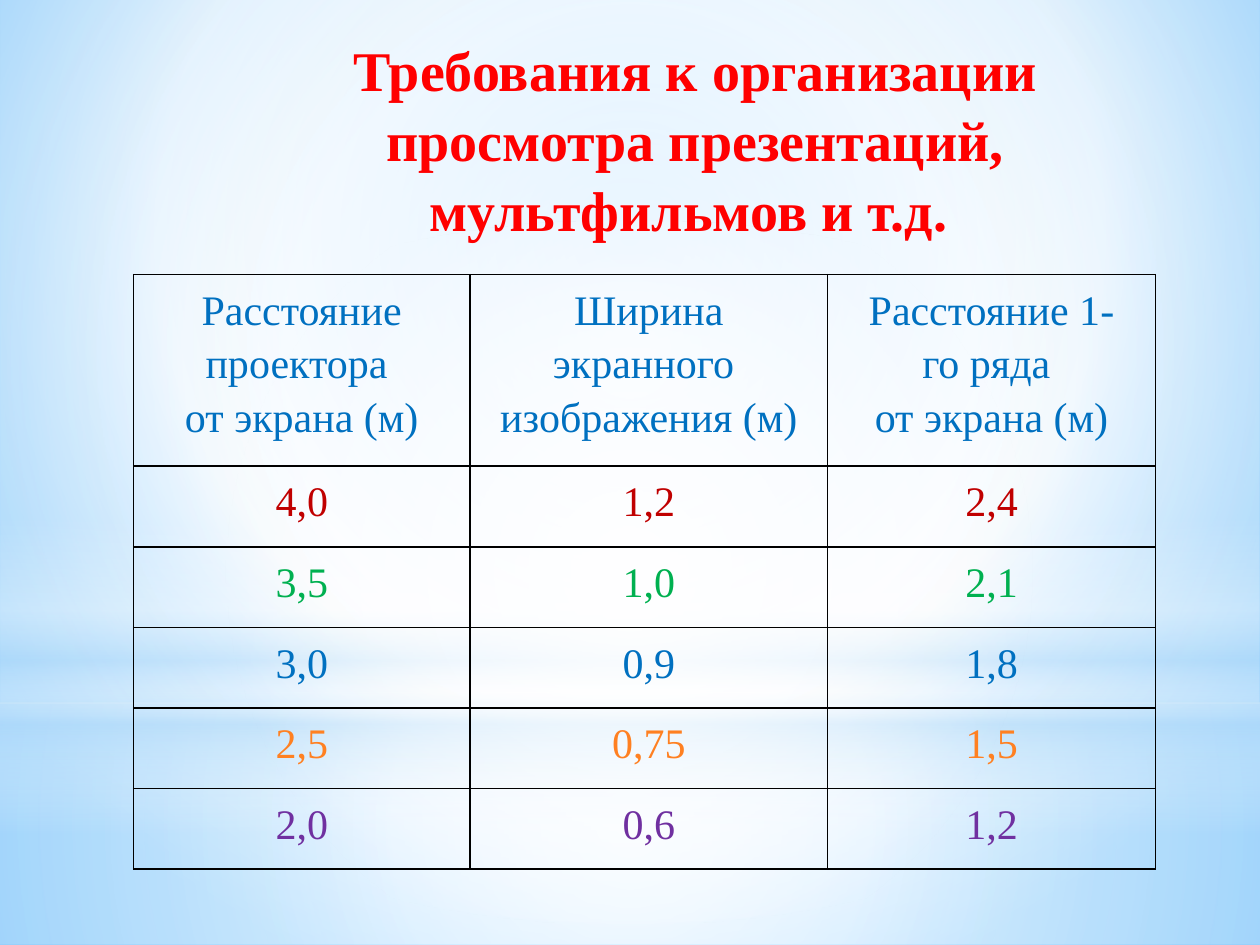
from dataclasses import dataclass

from lxml.etree import SubElement as add_node
from pptx import Presentation
from pptx.dml.color import RGBColor
from pptx.enum.shapes import MSO_SHAPE as Preset
from pptx.enum.text import MSO_ANCHOR as Anchor, PP_ALIGN as Align
from pptx.oxml.ns import qn
from pptx.util import Inches, Pt


@dataclass(frozen=True)
class Theme:
    """Colours, font and type sizes of the slide."""
    font: str = "Times New Roman"
    title_size: int = 32
    table_size: int = 24
    title: str = "FF0000"
    border: str = "000000"
    white: str = "FFFFFF"
    haze: str = "B4DCFA"
    sky: str = "9ED5FF"
    deep_sky: str = "5BB9FF"
    rows: tuple = ("0070C0", "C00000", "00B050", "0070C0", "FF8021", "7030A0")


THEME = Theme()
CENTRE = (50, 50, 50, 50)
TITLE = "Требования к организации просмотра презентаций, мультфильмов и т.д. "
ROWS = (
    ("Расстояние проектора \vот экрана (м)",
     "Ширина экранного \vизображения (м)",
     "Расстояние 1-го ряда \vот экрана (м)"),
    ("4,0", "1,2", "2,4"),
    ("3,5", "1,0", "2,1"),
    ("3,0", "0,9", "1,8"),
    ("2,5", "0,75", "1,5"),
    ("2,0", "0,6", "1,2"),
)
COLUMN_WIDTHS = (2.67, 2.84, 2.6)
ROW_HEIGHTS = (1.52,) + (0.64,) * 5


def set_gradient(owner, stops, focus=None):
    """Fill an owner with (position, colour, opacity) stops, circular when focus is given."""
    owner_fill = owner.background.fill if hasattr(owner, "background") else owner.fill
    owner_fill.gradient()
    gradient = owner.element.find(".//" + qn("a:gradFill"))
    gradient.clear()
    gradient.set("rotWithShape", "1")
    stop_list = add_node(gradient, qn("a:gsLst"))
    for position, colour, opacity in stops:
        stop = add_node(stop_list, qn("a:gs"), pos=str(position * 1000))
        shade = add_node(stop, qn("a:srgbClr"), val=colour)
        if opacity < 100:
            add_node(shade, qn("a:alpha"), val=str(opacity * 1000))
    if focus:
        circle = add_node(gradient, qn("a:path"), path="circle")
        sides = {side: str(share * 1000) for side, share in zip("ltrb", focus)}
        add_node(circle, qn("a:fillToRect"), **sides)
    else:
        add_node(gradient, qn("a:lin"), ang="5400000", scaled="0")


def add_glow(page, preset, top, height, stops, focus=CENTRE):
    """Add a full-width translucent gradient shape."""
    glow = page.shapes.add_shape(preset, 0, Inches(top), Inches(10), Inches(height))
    glow.shadow.inherit = False
    glow.line.fill.background()
    set_gradient(glow, stops, focus)


def write_text(frame, text, *, size, colour, bold=False, spacing=1.0, before=0, indent=0):
    """Write one centred paragraph with the given format."""
    frame.word_wrap = True
    para = frame.paragraphs[0]
    para.text = text
    para.alignment = Align.CENTER
    para.line_spacing = spacing
    para.space_before = Pt(before)
    if indent:
        properties = para._p.get_or_add_pPr()
        for side in ("marL", "marR"):
            properties.set(side, str(Inches(indent)))
        properties.set("indent", "0")
    for span in para.runs:
        span.font.name = THEME.font
        span.font.size = Pt(size)
        span.font.bold = bold
        span.font.color.rgb = RGBColor.from_string(colour)


def add_title(page):
    """Add the slide heading."""
    box = page.shapes.add_textbox(Inches(1.96), Inches(0.21), Inches(7.12), Inches(1.97))
    box.text_frame.vertical_anchor = Anchor.TOP
    write_text(box.text_frame, TITLE, size=THEME.title_size, colour=THEME.title,
               bold=True, spacing=1.04)


def set_borders(cell):
    """Draw a thin line on each side of a cell."""
    properties = cell._tc.get_or_add_tcPr()
    for side in ("a:lnL", "a:lnR", "a:lnT", "a:lnB"):
        line = add_node(properties, qn(side), w=str(Pt(1)))
        add_node(add_node(line, qn("a:solidFill")), qn("a:srgbClr"), val=THEME.border)


def add_distance_table(page):
    """Add the table of projector, screen and seat distances."""
    frame = page.shapes.add_table(len(ROWS), len(COLUMN_WIDTHS), Inches(1.06), Inches(2.18),
                                  Inches(sum(COLUMN_WIDTHS)), Inches(sum(ROW_HEIGHTS)))
    table = frame.table
    table.first_row = table.horz_banding = False
    for column, width in zip(table.columns, COLUMN_WIDTHS):
        column.width = Inches(width)
    for row, height, texts, colour in zip(table.rows, ROW_HEIGHTS, ROWS, THEME.rows):
        row.height = Inches(height)
        for cell, text in zip(row.cells, texts):
            for side in ("left", "top", "right", "bottom"):
                setattr(cell, "margin_" + side, Inches(0.05))
            set_borders(cell)
            cell.fill.background()
            write_text(cell.text_frame, text, size=THEME.table_size, colour=colour,
                       spacing=1.15, before=11.2, indent=0.16)


def add_backdrop(page):
    """Paint the sky gradient and the soft glows above it."""
    white, haze = THEME.white, THEME.haze
    set_gradient(page, ((0, THEME.sky, 100), (60, white, 100), (100, THEME.deep_sky, 100)),
                 (20, 10, 20, 60))
    add_glow(page, Preset.RECTANGLE, 5.58, 1.92,
             ((0, white, 91), (37, white, 76), (100, haze, 79)))
    add_glow(page, Preset.RECTANGLE, 0, 5.58,
             ((0, white, 89), (48, white, 62), (100, haze, 79)))
    add_glow(page, Preset.RECTANGLE, 4.12, 2.5,
             ((0, white, 0), (29, white, 30), (45, haze, 40),
              (55, white, 26), (65, haze, 60), (100, white, 0)), focus=None)
    add_glow(page, Preset.OVAL, 1.75, 5.58, ((0, white, 100), (56, white, 0)))


def main():
    """Build the slide and save the deck."""
    deck = Presentation()
    deck.slide_width, deck.slide_height = Inches(10), Inches(7.5)
    page = deck.slides.add_slide(deck.slide_layouts[6])
    add_backdrop(page)
    add_title(page)
    add_distance_table(page)
    deck.save("out.pptx")


if __name__ == "__main__":
    main()
